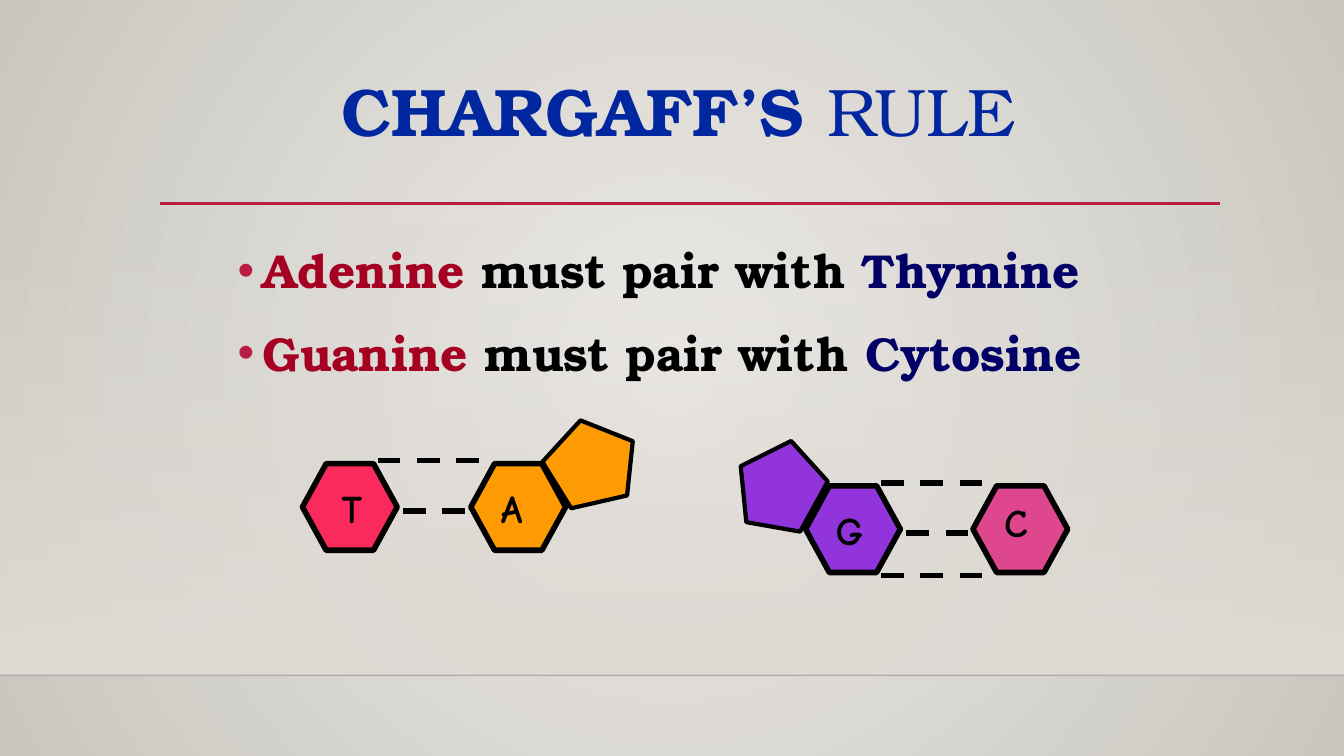
"""Build a slide on Chargaff's rule with the two base pairs drawn below it."""
from lxml import etree
from pptx import Presentation
from pptx.dml.color import RGBColor
from pptx.enum.dml import MSO_LINE
from pptx.enum.shapes import MSO_CONNECTOR, MSO_SHAPE
from pptx.enum.text import MSO_ANCHOR, PP_ALIGN
from pptx.oxml import parse_xml
from pptx.oxml.ns import nsdecls, qn
from pptx.util import Pt

PX = 9144
STRAIGHT = MSO_CONNECTOR.STRAIGHT
DASH = MSO_LINE.DASH
HEXAGON, PENTAGON = MSO_SHAPE.HEXAGON, MSO_SHAPE.REGULAR_PENTAGON
CENTER, LEFT = PP_ALIGN.CENTER, PP_ALIGN.LEFT
SERIF, HAND = "TeX Gyre Bonum", "Comic Neue"
BLACK, CRIMSON, BLUE = "000000", "B71E42", "00279F"
RED, NAVY = "A50021", "000066"
ORANGE, PURPLE, PINK, ROSE = "FE9B03", "9234DB", "FA2B5C", "DE478E"


def color(code):
    return RGBColor.from_string(code)


def write(paragraphs, at, font=SERIF, size=34, align=LEFT, spacing=1.0, wrap=True, bullet=None):
    box = page.shapes.add_textbox(*(value * PX for value in at))
    frame = box.text_frame
    frame.word_wrap = wrap
    frame.vertical_anchor = MSO_ANCHOR.TOP
    for index, spans in enumerate(paragraphs):
        para = frame.add_paragraph() if index else frame.paragraphs[0]
        para.alignment = align
        para.line_spacing = spacing
        if index:
            para.space_before = Pt(10)
        if bullet:
            properties = para._p.get_or_add_pPr()
            properties.set("marL", str(25 * PX))
            properties.set("indent", str(-25 * PX))
            tint = etree.SubElement(properties, qn("a:buClr"))
            etree.SubElement(tint, qn("a:srgbClr"), val=bullet)
            etree.SubElement(properties, qn("a:buFont"), typeface="Arial")
            etree.SubElement(properties, qn("a:buChar"), char="•")
        for text, code, bold in spans:
            span = para.add_run()
            span.text = text
            span.font.name = font
            span.font.size = Pt(size)
            span.font.bold = bold
            span.font.color.rgb = color(code)


deck = Presentation()
deck.slide_width, deck.slide_height = 1333 * PX, 750 * PX
page = deck.slides.add_slide(deck.slide_layouts[6])

backdrop = page.background.fill
backdrop.gradient()
for stop, code in zip(backdrop.gradient_stops, ("ECEAE7", "CAC7C1")):
    stop.color.rgb = color(code)
gradient = page.element.find(".//" + qn("a:gradFill"))
gradient.replace(gradient.find(qn("a:lin")), parse_xml(
    f'<a:path {nsdecls("a")} path="circle">'
    '<a:fillToRect l="50000" t="50000" r="50000" b="50000"/></a:path>'))

wall = page.shapes.add_shape(MSO_SHAPE.RECTANGLE, 0, 221 * PX, 1333 * PX, 449 * PX)
wall.shadow.inherit = False
wall.line.fill.background()
wall.fill.gradient()
wall.fill.gradient_angle = 270
for stop in wall.fill.gradient_stops:
    stop.color.rgb = color("DFDBD5")
clear = wall._element.spPr.find(".//" + qn("a:srgbClr"))
etree.SubElement(clear, qn("a:alpha"), val="0")

write([[("CHARGAFF’S ", BLUE, True), ("RULE", BLUE, False)]],
      (319, 73, 708, 100), size=48, align=CENTER, spacing=0.9)
pairs = [("Adenine", "Thymine"), ("Guanine", "Cytosine")]
write([[(first, RED, True), (" must pair with ", BLACK, True), (second, NAVY, True)]
       for first, second in pairs],
      (226, 223, 907, 517), spacing=1.2, bullet=CRIMSON)

rings = [
    (HEXAGON, 300, 460, 0, PINK),
    (HEXAGON, 467, 460, 0, ORANGE),
    (PENTAGON, 539, 416, 347.1, ORANGE),
    (HEXAGON, 799, 482, 0, PURPLE),
    (HEXAGON, 965, 482, 0, ROSE),
    (PENTAGON, 725, 441, 298.9, PURPLE),
]
for kind, left, top, turn, code in rings:
    width, height, weight = (94, 86, 4) if kind == HEXAGON else (92, 83, 3)
    ring = page.shapes.add_shape(kind, left * PX, top * PX, width * PX, height * PX)
    ring.shadow.inherit = False
    ring.rotation = turn
    ring.fill.solid()
    ring.fill.fore_color.rgb = color(code)
    ring.line.color.rgb = color(BLACK)
    ring.line.width = Pt(weight)
    if kind == HEXAGON:
        ring.adjustments[0] = 0.274

lines = [
    (0, 1333, 670, "000001", 1, None, 20),
    (159, 1210, 202, CRIMSON, 2.5, None, 100),
]
bonds = [(375, 486, 457), (400, 469, 507), (874, 985, 479), (899, 960, 529), (874, 985, 571)]
lines += [(*bond, BLACK, 4, DASH, 100) for bond in bonds]
for start, end, level, code, weight, dash, opacity in lines:
    line = page.shapes.add_connector(STRAIGHT, start * PX, level * PX, end * PX, level * PX)
    line.line.color.rgb = color(code)
    line.line.width = Pt(weight)
    if dash:
        line.line.dash_style = dash
    if opacity < 100:
        shade = line._element.spPr.find(".//" + qn("a:srgbClr"))
        etree.SubElement(shade, qn("a:alpha"), val=str(opacity * 1000))
    etree.SubElement(line._element.spPr, qn("a:effectLst"))

letters = [("T", 329, 476, 47), ("A", 487, 476, 49), ("G", 819, 497, 47), ("C", 986, 489, 44)]
for letter, left, top, width in letters:
    write([[(letter, BLACK, True)]], (left, top, width, 57), font=HAND, size=28, wrap=False)

deck.save("out.pptx")
